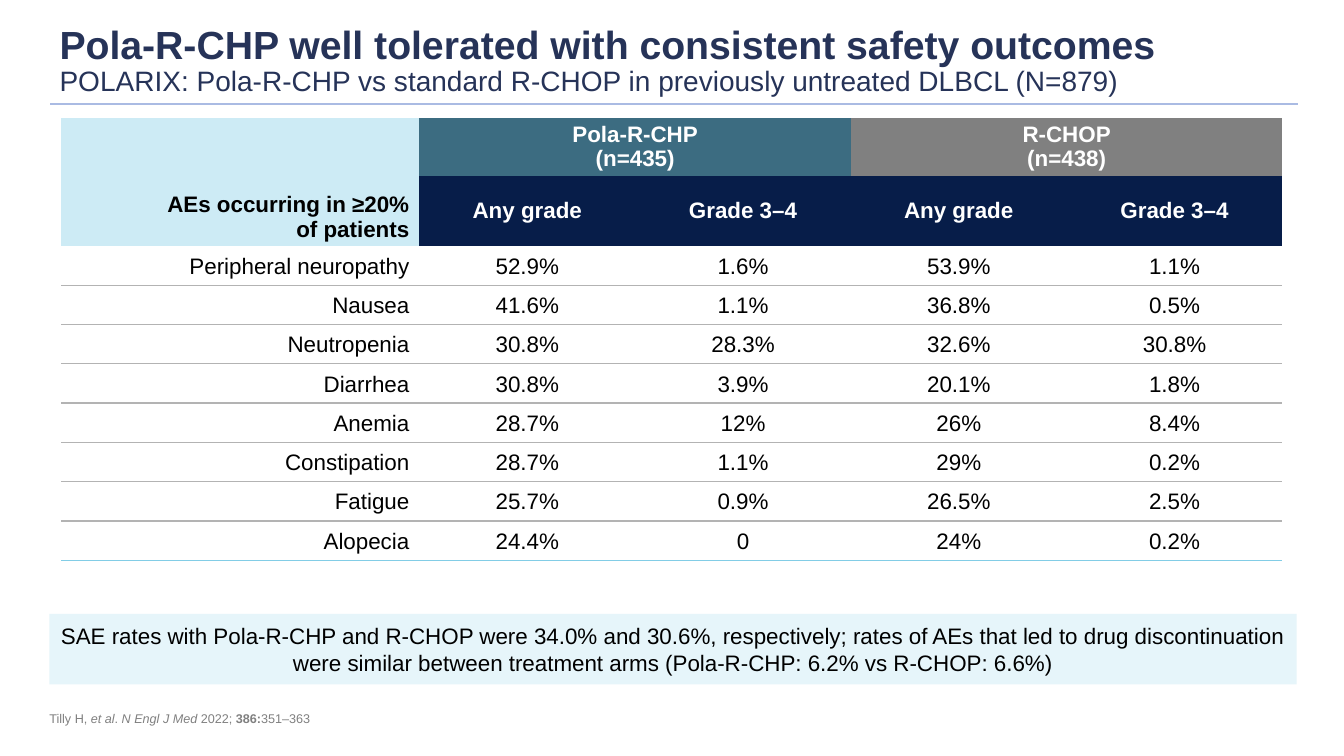
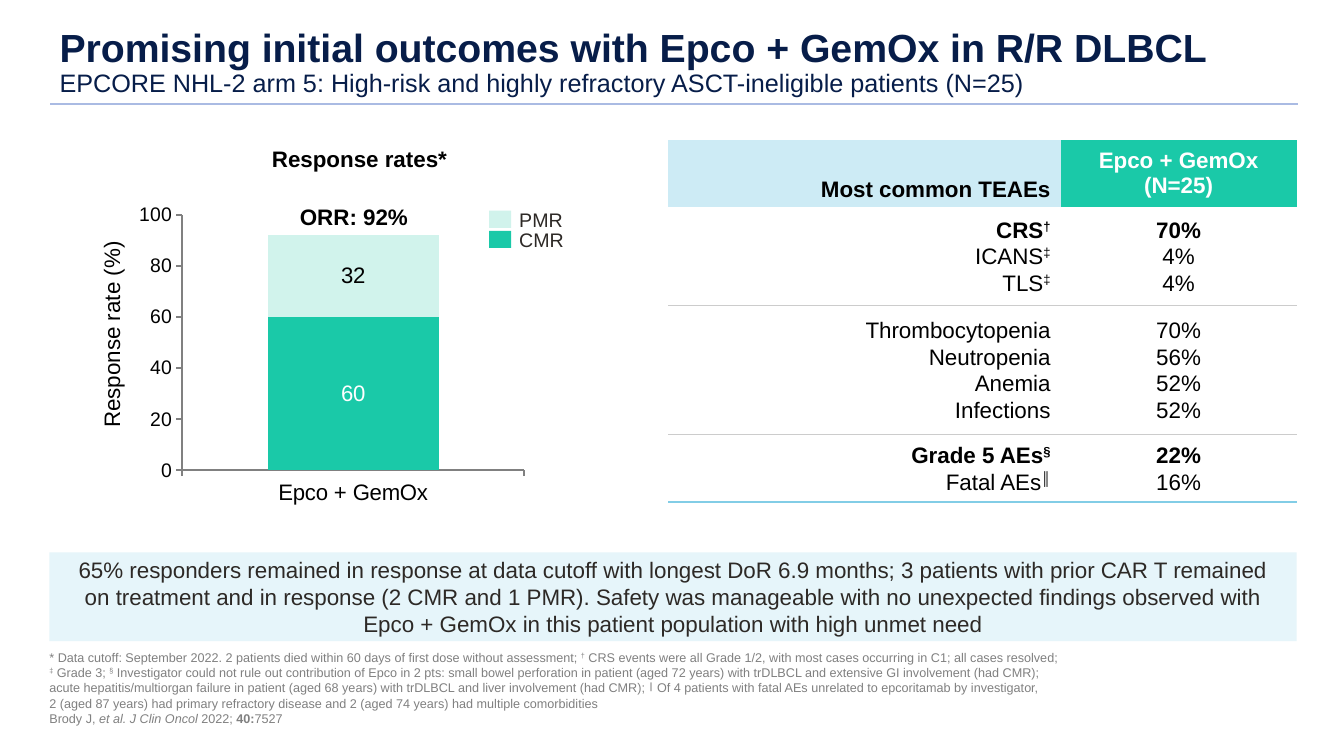
import copy
from dataclasses import dataclass

from lxml import etree
from pptx import Presentation
from pptx.chart.data import CategoryChartData
from pptx.dml.color import RGBColor
from pptx.enum import chart as charts, shapes, text
from pptx.oxml import ns, parse_xml
from pptx.util import Inches, Pt

LEFT, CENTER, RIGHT = text.PP_ALIGN.LEFT, text.PP_ALIGN.CENTER, text.PP_ALIGN.RIGHT
TOP, MIDDLE, BOTTOM = text.MSO_ANCHOR.TOP, text.MSO_ANCHOR.MIDDLE, text.MSO_ANCHOR.BOTTOM
PLAIN_TABLE = "{2D5ABB26-0587-4C30-8999-92F81FD0307C}"


# Theme: colours and type sizes
@dataclass(frozen=True)
class Theme:
    font: str = "Arial"
    title: int = 28
    body: int = 16
    small: int = 14
    note: int = 9
    black: str = "000000"
    white: str = "FFFFFF"
    ink: str = "2D2926"
    navy: str = "071D49"
    indigo: str = "263358"
    grey: str = "808080"
    rule: str = "AABBE3"
    row_line: str = "B3B3B3"
    group_line: str = "CCCCCC"
    end_line: str = "82CDE6"
    header: str = "CDEBF5"
    banner: str = "E6F5FA"
    pola: str = "3C6C81"
    teal: str = "1AC9A8"
    mint: str = "D1F3EC"


THEME = Theme()
MARGIN, CONTENT_WIDTH = 0.49, 12.37
BOLD, ITALIC, SUPER = {"bold": True}, {"italic": True}, {"superscript": True}


def rgb(value):
    return RGBColor.from_string(value)


def box(*lengths):
    return [Inches(length) for length in lengths]


# Text
def add_run(paragraph, words, size, color, bold=False, italic=False, superscript=False):
    for index, line in enumerate(words.split("\n")):
        if index:
            paragraph.add_line_break()
        run = paragraph.add_run()
        run.text = line
        font = run.font
        font.name, font.size, font.bold, font.italic = THEME.font, Pt(size), bold, italic
        font.color.rgb = rgb(color)
        properties = run._r.get_or_add_rPr()
        if superscript:
            properties.set("baseline", "30000")
        if index:  # the break takes the size of the line it opens
            run._r.getprevious().insert(0, copy.deepcopy(properties))


def write(frame, *paragraphs, align=LEFT, spacing=None, size=THEME.body,
          color=THEME.black, **style):
    """Each paragraph is a string or a list of strings and (string, style) pairs."""
    for index, content in enumerate(paragraphs):
        paragraph = frame.add_paragraph() if index else frame.paragraphs[0]
        paragraph.alignment = align
        if spacing:
            paragraph.line_spacing = spacing
        for piece in [content] if isinstance(content, str) else content:
            words, own = (piece, {}) if isinstance(piece, str) else piece
            add_run(paragraph, words, **{"size": size, "color": color, **style, **own})


def set_frame(frame, anchor, insets):
    frame.word_wrap = True
    frame.vertical_anchor = anchor
    (frame.margin_left, frame.margin_top,
     frame.margin_right, frame.margin_bottom) = box(*insets)


def add_label(slide, place, *paragraphs, anchor=TOP, insets=(0.1, 0.05, 0.1, 0.05),
              rotation=0, **style):
    label = slide.shapes.add_textbox(*box(*place))
    label.rotation = rotation
    set_frame(label.text_frame, anchor, insets)
    write(label.text_frame, *paragraphs, **style)


def add_block(slide, place, fill):
    block = slide.shapes.add_shape(shapes.MSO_SHAPE.RECTANGLE, *box(*place))
    block.shadow.inherit = False
    block.fill.solid()
    block.fill.fore_color.rgb = rgb(fill)
    block.line.fill.background()
    return block


# Parts shared by the slides
def prepare_layout(deck):
    layout = deck.slide_layouts.get_by_name("Title Only")
    title = layout.placeholders[0]
    title.left, title.top, title.width, title.height = box(MARGIN, 0.32, CONTENT_WIDTH, 0.7)
    set_frame(title.text_frame, BOTTOM, (0.1, 0.05, 0.1, 0.05))
    title.text_frame.auto_size = text.MSO_AUTO_SIZE.NONE
    return layout


def add_slide(deck, layout, heading, subheading, subheading_size, color):
    slide = deck.slides.add_slide(layout)
    write(slide.shapes.title.text_frame,
          [(heading + "\n", BOLD), (subheading, {"size": subheading_size})],
          size=THEME.title, color=color, spacing=0.9)
    rule = slide.shapes.add_connector(shapes.MSO_CONNECTOR.STRAIGHT,
                                      *box(0.5, 1.03, 12.87, 1.03))
    rule.line.color.rgb = rgb(THEME.rule)
    rule.line.width = Pt(1.1)
    etree.SubElement(rule.element.spPr, ns.qn("a:effectLst"))
    return slide


def add_banner(slide, top, height, message, color=THEME.black):
    banner = add_block(slide, (MARGIN, top, CONTENT_WIDTH, height), THEME.banner)
    set_frame(banner.text_frame, MIDDLE, (0, 0, 0, 0))
    write(banner.text_frame, message, align=CENTER, color=color)


def add_footnote(slide, *paragraphs):
    add_label(slide, (MARGIN, 6.44, 11, 0.76), *paragraphs, anchor=BOTTOM,
              insets=(0, 0, 0, 0), size=THEME.note, color=THEME.grey)


# Tables
def add_table(slide, left, top, widths, heights):
    frame = slide.shapes.add_table(len(heights), len(widths),
                                   *box(left, top, sum(widths), sum(heights)))
    table = frame.table
    table.first_row = table.horz_banding = False
    table._tbl.tblPr.find(ns.qn("a:tableStyleId")).text = PLAIN_TABLE
    for column, width in zip(table.columns, widths):
        column.width = Inches(width)
    for row, height in zip(table.rows, heights):
        row.height = Inches(height)
    return table


def fill_cell(cell, *paragraphs, fill=None, anchor=MIDDLE, underline=None, **style):
    cell.margin_left = cell.margin_right = Inches(0.1)
    cell.margin_top = cell.margin_bottom = Inches(0.04)
    cell.vertical_anchor = anchor
    write(cell.text_frame, *paragraphs, **style)
    if fill:
        cell.fill.solid()
        cell.fill.fore_color.rgb = rgb(fill)
    if underline:
        cell._tc.get_or_add_tcPr().insert(0, parse_xml(
            f'<a:lnB {ns.nsdecls("a")} w="12700"><a:solidFill>'
            f'<a:srgbClr val="{underline}"/></a:solidFill></a:lnB>'))


def fill_body(table, first_row, rows, line):
    """Each row is a list of cells, each cell a list of paragraphs."""
    for index, row in enumerate(rows):
        underline = THEME.end_line if index == len(rows) - 1 else line
        for column, paragraphs in enumerate(row):
            fill_cell(table.cell(first_row + index, column), *paragraphs, spacing=1.07,
                      align=CENTER if column else RIGHT, underline=underline)


def add_safety_table(slide):
    events = [
        ("Peripheral neuropathy", "52.9%", "1.6%", "53.9%", "1.1%"),
        ("Nausea", "41.6%", "1.1%", "36.8%", "0.5%"),
        ("Neutropenia", "30.8%", "28.3%", "32.6%", "30.8%"),
        ("Diarrhea", "30.8%", "3.9%", "20.1%", "1.8%"),
        ("Anemia", "28.7%", "12%", "26%", "8.4%"),
        ("Constipation", "28.7%", "1.1%", "29%", "0.2%"),
        ("Fatigue", "25.7%", "0.9%", "26.5%", "2.5%"),
        ("Alopecia", "24.4%", "0", "24%", "0.2%"),
    ]
    table = add_table(slide, 0.61, 1.17, [3.55] + [2.14] * 4,
                      [0.58, 0.69] + [0.39] * len(events))
    table.cell(0, 0).merge(table.cell(1, 0))
    fill_cell(table.cell(0, 0), "AEs occurring in ≥20%\nof patients", fill=THEME.header,
              anchor=BOTTOM, align=RIGHT, bold=True)
    arms = [("Pola-R-CHP\n(n=435)", THEME.pola), ("R-CHOP\n(n=438)", THEME.grey)]
    heading = dict(align=CENTER, color=THEME.white, bold=True)
    for column, (arm, fill) in zip((1, 3), arms):
        table.cell(0, column).merge(table.cell(0, column + 1))
        fill_cell(table.cell(0, column), arm, fill=fill, anchor=TOP, **heading)
        for offset, grade in enumerate(("Any grade", "Grade 3–4")):
            fill_cell(table.cell(1, column + offset), grade, fill=THEME.navy, **heading)
    fill_body(table, 2, [[[value] for value in event] for event in events], THEME.row_line)


def add_teae_table(slide):
    table = add_table(slide, 6.63, 1.39, [3.89, 2.34], [0.66, 0.98, 1.28, 0.67])
    fill_cell(table.cell(0, 0), "Most common TEAEs", fill=THEME.header, anchor=BOTTOM,
              align=RIGHT, bold=True)
    fill_cell(table.cell(0, 1), "Epco + GemOx", "(N=25)", fill=THEME.teal,
              align=CENTER, color=THEME.white, bold=True)
    strong_super = {**BOLD, **SUPER}
    groups = [
        [[[("CRS", BOLD), ("†", strong_super)], ["ICANS", ("‡", SUPER)],
          ["TLS", ("‡", SUPER)]],
         [[("70%", BOLD)], "4%", "4%"]],
        [["Thrombocytopenia", "Neutropenia", "Anemia", "Infections"],
         ["70%", "56%", "52%", "52%"]],
        [[[("Grade 5 AEs", BOLD), ("§", strong_super)], ["Fatal AEs", ("║", SUPER)]],
         [[("22%", BOLD)], "16%"]],
    ]
    fill_body(table, 1, groups, THEME.group_line)


# Chart
def style_axis(axis, size):
    axis.has_major_gridlines = False
    axis.major_tick_mark = charts.XL_TICK_MARK.OUTSIDE
    axis.minor_tick_mark = charts.XL_TICK_MARK.NONE
    axis.format.line.color.rgb = rgb(THEME.grey)
    axis.format.line.width = Pt(1.5)
    axis.tick_labels.font.size = Pt(size)


def set_plot_area(chart, **fractions):
    sizes = "".join(f'<c:{key} val="{value}"/>' for key, value in fractions.items())
    plot_area = chart.element.find(".//" + ns.qn("c:plotArea"))
    for layout in plot_area.findall(ns.qn("c:layout")):
        plot_area.remove(layout)
    plot_area.insert(0, parse_xml(
        f'<c:layout {ns.nsdecls("c")}><c:manualLayout><c:layoutTarget val="inner"/>'
        f'<c:xMode val="edge"/><c:yMode val="edge"/>{sizes}</c:manualLayout></c:layout>'))


def add_response_chart(slide):
    responses = [("CMR", 60, THEME.teal, THEME.white), ("PMR", 32, THEME.mint, THEME.black)]
    data = CategoryChartData(number_format="0")
    data.categories = ["Epco + GemOx"]
    for name, rate, _, _ in responses:
        data.add_series(name, [rate])
    chart = slide.shapes.add_chart(charts.XL_CHART_TYPE.COLUMN_STACKED,
                                   *box(1.38, 1.97, 3.86, 3.21), data).chart
    chart.has_legend = chart.has_title = False
    chart.font.name, chart.font.size = THEME.font, Pt(THEME.body)
    chart.font.color.rgb = rgb(THEME.black)
    set_plot_area(chart, x=0.1, y=0.05, w=0.89, h=0.79)

    style_axis(chart.category_axis, THEME.body)
    rates = chart.value_axis
    style_axis(rates, THEME.small)
    rates.minimum_scale, rates.maximum_scale, rates.major_unit = 0, 100, 20

    plot = chart.plots[0]
    plot.gap_width, plot.overlap, plot.vary_by_categories = 100, 100, False
    for series, (_, _, fill, color) in zip(plot.series, responses):
        series.format.fill.solid()
        series.format.fill.fore_color.rgb = rgb(fill)
        labels = series.data_labels
        labels.show_value = True
        labels.position = charts.XL_LABEL_POSITION.CENTER
        labels.font.size = Pt(THEME.body)
        labels.font.color.rgb = rgb(color)

    # Captions and key
    add_label(slide, (0.05, 3.15, 2.08, 0.34), "Response rate (%)", rotation=270, align=CENTER)
    add_label(slide, (MARGIN, 1.39, 6.15, 0.37), "Response rates*", align=CENTER, bold=True)
    add_label(slide, (2.62, 1.97, 1.78, 0.37), "ORR: 92%", align=CENTER, bold=True)
    for index, (name, _, fill, _) in enumerate(reversed(responses)):
        top = 2.07 + 0.2 * index
        add_block(slide, (4.85, top + 0.02, 0.22, 0.17), fill)
        add_label(slide, (5.07, top, 0.7, 0.21), name, anchor=MIDDLE,
                  insets=(0.08, 0, 0, 0), size=THEME.small, color=THEME.ink)


# Slides
def build_safety_slide(deck, layout):
    slide = add_slide(
        deck, layout, "Pola-R-CHP well tolerated with consistent safety outcomes",
        "POLARIX: Pola-R-CHP vs standard R-CHOP in previously untreated DLBCL (N=879)",
        20, THEME.indigo)
    add_safety_table(slide)
    add_banner(slide, 6.09, 0.7,
               "SAE rates with Pola-R-CHP and R-CHOP were 34.0% and 30.6%, respectively; "
               "rates of AEs that led to drug discontinuation were similar between "
               "treatment arms (Pola-R-CHP: 6.2% vs R-CHOP: 6.6%)")
    add_footnote(slide, ["Tilly H, ", ("et al", ITALIC), ". ", ("N Engl J Med ", ITALIC),
                         "2022; ", ("386:", BOLD), "351–363"])


def build_response_slide(deck, layout):
    slide = add_slide(
        deck, layout, "Promising initial outcomes with Epco + GemOx in R/R DLBCL",
        "EPCORE NHL-2 arm 5: High-risk and highly refractory ASCT-ineligible patients (N=25)",
        18, THEME.navy)
    add_response_chart(slide)
    add_banner(slide, 5.48, 0.88,
               "65% responders remained in response at data cutoff with longest DoR "
               "6.9 months; 3 patients with prior CAR T remained\n"
               "on treatment and in response (2 CMR and 1 PMR). Safety was manageable "
               "with no unexpected findings observed with\n"
               "Epco + GemOx in this patient population with high unmet need", THEME.ink)
    add_teae_table(slide)
    add_footnote(
        slide,
        ["* Data cutoff: September 2022. 2 patients died within 60 days of first dose "
         "without assessment; ", ("†", SUPER),
         " CRS events were all Grade 1/2, with most cases occurring in C1; "
         "all cases resolved;\n", ("‡", SUPER), " Grade 3; ", ("§", SUPER),
         " Investigator could not rule out contribution of Epco in 2 pts: small bowel "
         "perforation in patient (aged 72 years) with trDLBCL and extensive GI "
         "involvement (had CMR);\nacute hepatitis/multiorgan failure in patient (aged "
         "68 years) with trDLBCL and liver involvement (had CMR); ", ("║", SUPER),
         " Of 4 patients with fatal AEs unrelated to epcoritamab by investigator,\n"
         "2 (aged 87 years) had primary refractory disease and 2 (aged 74 years) had "
         "multiple comorbidities"],
        ["Brody J, ", ("et al. J Clin Oncol ", ITALIC), "2022; ", ("40:", BOLD), "7527"])


def main():
    deck = Presentation()
    deck.slide_width, deck.slide_height = box(13.33, 7.5)
    layout = prepare_layout(deck)
    build_safety_slide(deck, layout)
    build_response_slide(deck, layout)
    deck.save("out.pptx")


if __name__ == "__main__":
    main()
